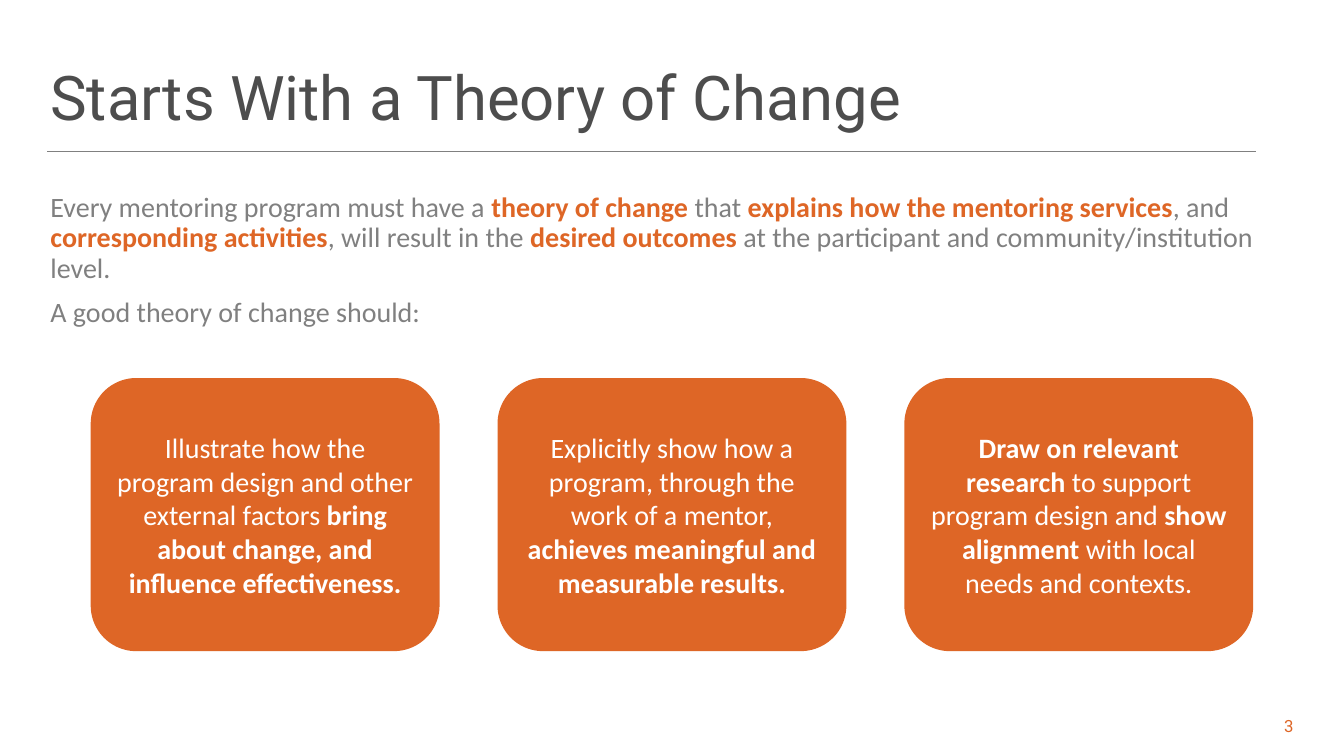
"""Build the theory of change slide with its three criteria cards."""
from dataclasses import dataclass
from typing import Any

from lxml.etree import SubElement
from pptx import Presentation
from pptx.dml.color import RGBColor
from pptx.enum.shapes import MSO_CONNECTOR, MSO_SHAPE
from pptx.enum.text import MSO_ANCHOR, MSO_AUTO_SIZE, PP_ALIGN
from pptx.oxml.ns import qn
from pptx.util import Inches, Pt

ORANGE = RGBColor(0xDE, 0x66, 0x26)
DARK = RGBColor(0x4D, 0x4D, 0x4D)
GRAY = RGBColor(0x80, 0x80, 0x80)
WHITE = RGBColor(0xFF, 0xFF, 0xFF)

CARD_LEFT, CARD_TOP, CARD_WIDTH, CARD_HEIGHT = 0.9, 3.75, 3.46, 2.71
CARD_STEP = 4.035

NO_INSETS = {"margin_left": 0, "margin_top": 0, "margin_right": 0,
             "margin_bottom": 0}
FRAME = {"word_wrap": True, "auto_size": MSO_AUTO_SIZE.NONE}
BODY_PARAGRAPH = {"line_spacing": 0.9, "space_before": Pt(0),
                  "space_after": Pt(10), "alignment": PP_ALIGN.LEFT}


@dataclass(frozen=True)
class Phrase:
    text: str
    bold: bool = False


INTRO = [
    [Phrase("Every mentoring program must have a "),
     Phrase("theory of change ", True),
     Phrase("that "),
     Phrase("explains how the mentoring services", True),
     Phrase(", and "),
     Phrase("corresponding activities", True),
     Phrase(", will result in the "),
     Phrase("desired outcomes ", True),
     Phrase("at the participant and community/institution level.")],
    [Phrase("A good theory of change should:")],
]

CARDS = [
    [Phrase("Illustrate how the program design and other external factors "),
     Phrase("bring about change, and influence effectiveness.", True)],
    [Phrase("Explicitly show how a program, through the work of a mentor, "),
     Phrase("achieves meaningful and measurable results.", True)],
    [Phrase("Draw on relevant research ", True),
     Phrase("to support program design and "),
     Phrase("show alignment", True),
     Phrase(" with local needs and contexts.")],
]


def apply(target: Any, values: dict[str, Any]) -> None:
    """Set each named attribute on the target."""
    for name, value in values.items():
        setattr(target, name, value)


def place(shape: Any, left: float, top: float, width: float, height: float) -> None:
    """Move and size a shape in inches."""
    apply(shape, {"left": Inches(left), "top": Inches(top),
                  "width": Inches(width), "height": Inches(height)})


def write(p: Any, phrases: list[Phrase], size: int, font: str,
          color: RGBColor, bold_color: RGBColor) -> None:
    """Add the phrases to a paragraph as formatted runs."""
    for phrase in phrases:
        r = p.add_run()
        r.text = phrase.text
        apply(r.font, {"name": font, "size": Pt(size), "bold": phrase.bold})
        r.font.color.rgb = bold_color if phrase.bold else color


def add_title(s: Any) -> None:
    """Fill the title placeholder."""
    title = s.shapes.title
    place(title, 0.5, 0.62, 12.33, 0.75)
    tf = title.text_frame
    apply(tf, FRAME | NO_INSETS | {"vertical_anchor": MSO_ANCHOR.MIDDLE})
    p = tf.paragraphs[0]
    apply(p, {"alignment": PP_ALIGN.LEFT, "line_spacing": 0.9})
    write(p, [Phrase("Starts With a Theory of Change")], 44, "Roboto", DARK, DARK)


def add_intro(s: Any) -> None:
    """Fill the body placeholder with unbulleted paragraphs."""
    body = s.placeholders[1]
    place(body, 0.5, 1.92, 12.33, 4.5)
    tf = body.text_frame
    apply(tf, FRAME | NO_INSETS | {"vertical_anchor": MSO_ANCHOR.TOP})
    for i, phrases in enumerate(INTRO):
        p = tf.add_paragraph() if i else tf.paragraphs[0]
        pPr = p._p.get_or_add_pPr()
        pPr.set("marL", "0")
        pPr.set("indent", "0")
        SubElement(pPr, qn("a:buNone"))
        apply(p, BODY_PARAGRAPH)
        write(p, phrases, 20, "Calibri", GRAY, ORANGE)


def add_card(s: Any, left: float, phrases: list[Phrase]) -> None:
    """Draw one rounded card with centred text."""
    card = s.shapes.add_shape(MSO_SHAPE.ROUNDED_RECTANGLE, Inches(left),
                              Inches(CARD_TOP), Inches(CARD_WIDTH),
                              Inches(CARD_HEIGHT))
    card.shadow.inherit = False
    card.fill.solid()
    card.fill.fore_color.rgb = ORANGE
    card.line.fill.background()
    tf = card.text_frame
    apply(tf, FRAME | {"vertical_anchor": MSO_ANCHOR.MIDDLE})
    p = tf.paragraphs[0]
    p.alignment = PP_ALIGN.CENTER
    write(p, phrases, 20, "Calibri", WHITE, WHITE)


def add_page_number(s: Any) -> None:
    """Write the page number at the lower right."""
    sp = s.shapes.add_textbox(Inches(12.42), Inches(7.08), Inches(0.41), Inches(0.22))
    tf = sp.text_frame
    apply(tf, FRAME | NO_INSETS | {"vertical_anchor": MSO_ANCHOR.BOTTOM})
    p = tf.paragraphs[0]
    apply(p, {"alignment": PP_ALIGN.RIGHT, "space_after": Pt(6)})
    write(p, [Phrase("3")], 12, "Roboto", ORANGE, ORANGE)


def add_rule(s: Any) -> None:
    """Draw the thin rule under the title."""
    rule = s.shapes.add_connector(MSO_CONNECTOR.STRAIGHT, Inches(0.47), Inches(1.5),
                                  Inches(12.46), Inches(1.5))
    rule.line.color.rgb = GRAY
    rule.line.width = Pt(0.5)
    SubElement(rule._element.spPr, qn("a:effectLst"))


def main() -> None:
    """Build and save the slide."""
    prs = Presentation()
    apply(prs, {"slide_width": Inches(13.33), "slide_height": Inches(7.5)})
    s = prs.slides.add_slide(prs.slide_layouts[1])
    add_title(s)
    add_intro(s)
    for i, phrases in enumerate(CARDS):
        add_card(s, CARD_LEFT + i * CARD_STEP, phrases)
    add_page_number(s)
    add_rule(s)
    prs.save("out.pptx")


if __name__ == "__main__":
    main()
